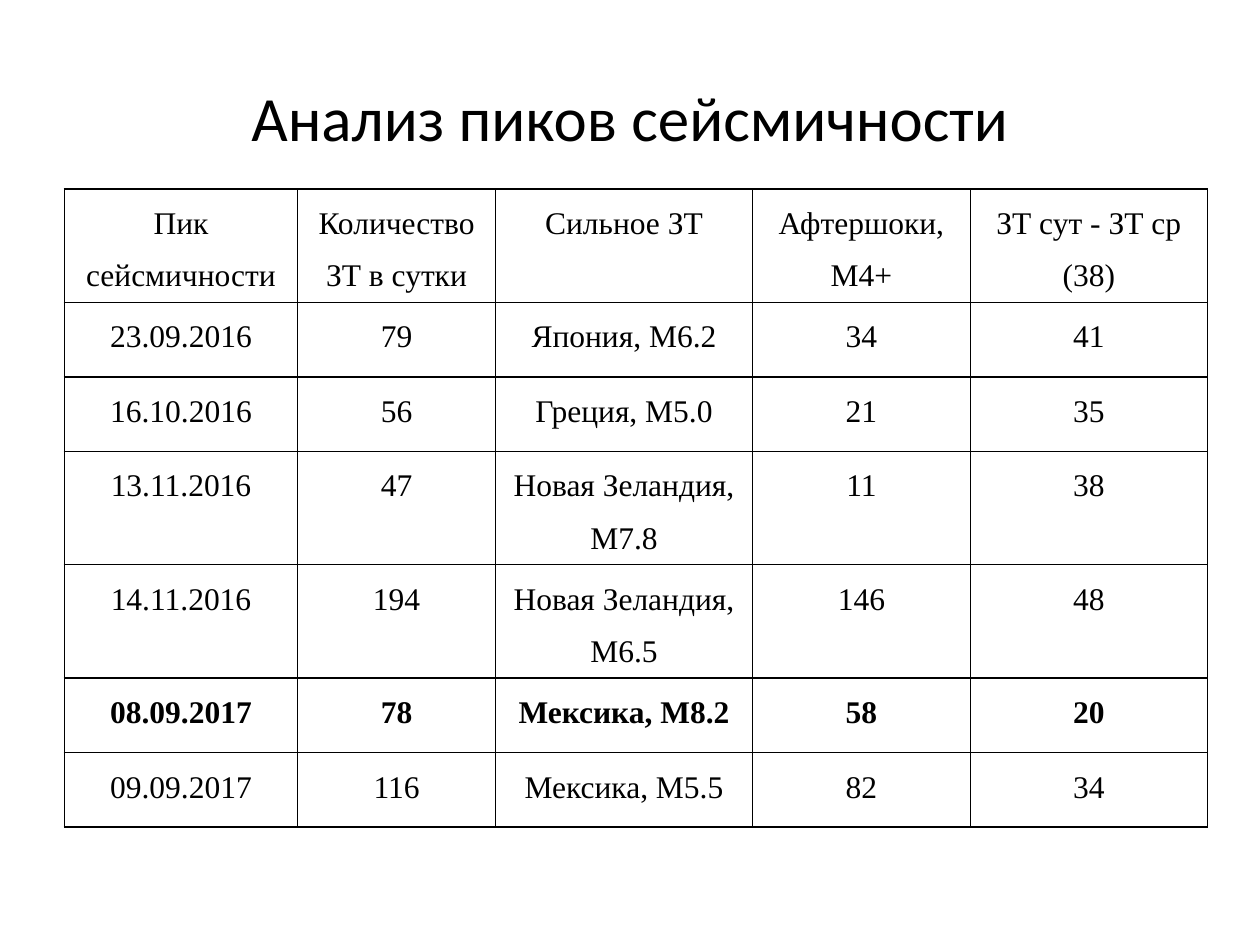
from dataclasses import dataclass

from lxml import etree
from pptx import Presentation
from pptx.dml.color import RGBColor
from pptx.enum.text import MSO_ANCHOR, PP_ALIGN
from pptx.oxml.ns import qn
from pptx.util import Cm, Pt

CENTER = PP_ALIGN.CENTER
MIDDLE, TOP = MSO_ANCHOR.MIDDLE, MSO_ANCHOR.TOP


@dataclass(frozen=True)
class Theme:
    ink: str = "000000"
    title_font: str = "Calibri"
    table_font: str = "Times New Roman"
    title_size: int = 36
    table_size: int = 18
    border: int = 1


THEME = Theme()
TITLE = "Анализ пиков сейсмичности"
COL_WIDTHS = [4.7, 3.99, 5.18, 4.39, 4.78]
HEADER_HEIGHT, ROW_HEIGHT = 2.26, 1.5
HIGHLIGHT = "08.09.2017"
PEAKS = [
    ["Пик сейсмичности", "Количество ЗТ в сутки", "Сильное ЗТ",
     "Афтершоки, М4+", "ЗТ сут - ЗТ ср (38)"],
    ["23.09.2016", "79", "Япония, М6.2", "34", "41"],
    ["16.10.2016", "56", "Греция, М5.0", "21", "35"],
    ["13.11.2016", "47", "Новая Зеландия, М7.8", "11", "38"],
    ["14.11.2016", "194", "Новая Зеландия, М6.5", "146", "48"],
    ["08.09.2017", "78", "Мексика, М8.2", "58", "20"],
    ["09.09.2017", "116", "Мексика, М5.5", "82", "34"],
]


def set_attrs(obj, values):
    for name, value in values.items():
        setattr(obj, name, value)


def write(tf, text, font, spacing=1.0):
    p = tf.paragraphs[0]
    set_attrs(p, {"alignment": CENTER, "line_spacing": spacing})
    r = p.add_run()
    r.text = text
    set_attrs(r.font, font)
    r.font.color.rgb = RGBColor.from_string(THEME.ink)


def add_borders(cell):
    tcPr = cell._tc.get_or_add_tcPr()
    for side in ("a:lnL", "a:lnR", "a:lnT", "a:lnB"):
        ln = etree.SubElement(tcPr, qn(side), w=str(Pt(THEME.border)))
        fill = etree.SubElement(ln, qn("a:solidFill"))
        etree.SubElement(fill, qn("a:srgbClr"), val=THEME.ink)


def add_title(s, left, top, width, height):
    tf = s.shapes.add_textbox(left, top, width, height).text_frame
    set_attrs(tf, {"word_wrap": True, "vertical_anchor": MIDDLE})
    write(tf, TITLE, {"name": THEME.title_font, "size": Pt(THEME.title_size)})


def add_peaks_table(s, left, top, width, height):
    table = s.shapes.add_table(len(PEAKS), len(COL_WIDTHS), left, top, width, height).table
    set_attrs(table, {"first_row": False, "horz_banding": False})
    for col, w in zip(table.columns, COL_WIDTHS):
        col.width = Cm(w)
    for i, values in enumerate(PEAKS):
        table.rows[i].height = Cm(ROW_HEIGHT if i else HEADER_HEIGHT)
        font = {"name": THEME.table_font, "size": Pt(THEME.table_size),
                "bold": values[0] == HIGHLIGHT}
        for j, text in enumerate(values):
            cell = table.cell(i, j)
            set_attrs(cell, {"margin_left": Cm(0.18), "margin_right": Cm(0.18),
                             "margin_top": 0, "margin_bottom": 0,
                             "vertical_anchor": TOP})
            add_borders(cell)
            cell.fill.background()
            write(cell.text_frame, text, font, 1.5)


def main():
    prs = Presentation()
    set_attrs(prs, {"slide_width": Cm(25.4), "slide_height": Cm(19.05)})
    s = prs.slides.add_slide(prs.slide_layouts[6])
    add_title(s, Cm(1.27), Cm(0.76), Cm(22.86), Cm(3.18))
    add_peaks_table(s, Cm(1.3), Cm(3.81), Cm(sum(COL_WIDTHS)),
                    Cm(HEADER_HEIGHT + ROW_HEIGHT * (len(PEAKS) - 1)))
    prs.save("out.pptx")


if __name__ == "__main__":
    main()
